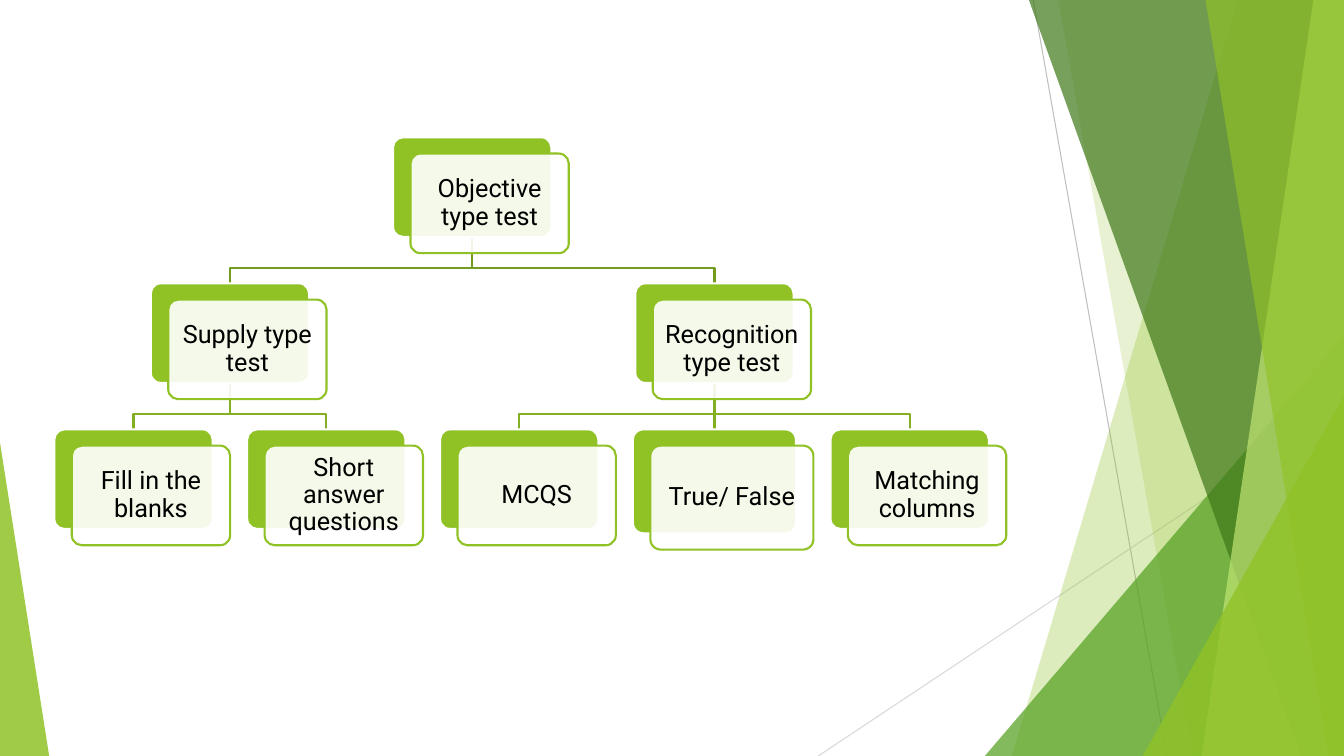
"""Build a slide with a tree of objective test types beside a green faceted border."""
from dataclasses import dataclass, field
from typing import Iterator, NamedTuple, Optional

from lxml.etree import SubElement
from pptx import Presentation
from pptx.dml.color import RGBColor
from pptx.enum.shapes import MSO_CONNECTOR as Link, MSO_SHAPE as Preset
from pptx.enum.text import MSO_ANCHOR as Anchor, PP_ALIGN as Align
from pptx.oxml.ns import qn
from pptx.util import Cm, Pt

COLORS = {
    "leaf": "90C226", "forest": "3F7819", "grass": "54A021", "lime": "C0E474",
    "root_link": "739B1E", "branch_link": "83B022",
    "gray": "BFBFBF", "pale": "D9D9D9", "white": "FFFFFF", "black": "000000",
}
WIDTH, HEIGHT = 33.87, 19.05
TREE_LEFT, TREE_TOP = 1.37, 3.46
LEAF_GAP, LEVEL_GAP, BEND = 0.87, 1.17, 0.79
CARD_W, CARD_H = 3.99, 2.51
OFFSET_X, OFFSET_Y = 0.44, 0.41
FRAME_FORMAT = {
    "word_wrap": True, "vertical_anchor": Anchor.MIDDLE,
    "margin_left": Cm(0.18), "margin_right": Cm(0.18),
    "margin_top": Cm(0.18), "margin_bottom": Cm(0.18),
}
PARAGRAPH_FORMAT = {"alignment": Align.CENTER, "line_spacing": 0.9}
FONT_FORMAT = {"name": "Roboto", "size": Pt(18)}


class Ray(NamedTuple):
    x1: float
    y1: float
    x2: float
    y2: float
    color: str


class Pane(NamedTuple):
    top_x: float
    bottom_x: float
    color: str
    opacity: int


class Wedge(NamedTuple):
    left: float
    top: float
    right: float
    apex: float
    color: str
    opacity: int


@dataclass
class TestType:
    label: str
    children: list["TestType"] = field(default_factory=list)
    width: float = CARD_W
    height: float = CARD_H
    center: float = 0
    top: float = TREE_TOP


RAYS = [
    Ray(26.04, 0, 29.41, HEIGHT, "gray"),
    Ray(WIDTH, 10.24, 20.62, HEIGHT, "pale"),
]
FACETS = [
    Pane(31.19, 25.5, "leaf", 30),
    Pane(26.67, 30.05, "leaf", 20),
    Wedge(24.82, 8.46, WIDTH, 1, "grass", 72),
    Pane(25.93, 32.79, "forest", 70),
    Pane(33.1, 30.28, "lime", 70),
    Pane(30.38, 33.48, "leaf", 65),
    Wedge(28.8, 9.98, WIDTH, 1, "leaf", 80),
    Wedge(0, 11.15, 1.24, 0, "leaf", 85),
]
OBJECTIVE = TestType("Objective type test", [
    TestType("Supply type test", [
        TestType("Fill in the blanks"),
        TestType("Short answer questions"),
    ]),
    TestType("Recognition type test", [
        TestType("MCQS"),
        TestType("True/ False", width=4.11, height=2.62),
        TestType("Matching columns"),
    ]),
])


def rgb(color: str) -> RGBColor:
    """Look up a named colour."""
    return RGBColor.from_string(COLORS[color])


def apply_format(target, values: dict) -> None:
    """Set every format value on the target."""
    for name, value in values.items():
        setattr(target, name, value)


def paint(shape, fill: Optional[str], opacity: int = 100, line: Optional[str] = None) -> None:
    """Set the fill, opacity and outline of a shape."""
    shape.shadow.inherit = False
    if fill:
        shape.fill.solid()
        shape.fill.fore_color.rgb = rgb(fill)
        if opacity < 100:
            tint = shape.fill._xPr.find(f".//{qn('a:srgbClr')}")
            SubElement(tint, qn("a:alpha")).set("val", str(opacity * 1000))
    else:
        shape.fill.background()
    if line:
        shape.line.color.rgb = rgb(line)
        shape.line.width = Pt(1.5)
    else:
        shape.line.fill.background()


def draw_ray(shapes, ray: Ray, width: float = 0.75) -> None:
    """Draw one straight line."""
    ends = (Cm(length) for length in ray[:4])
    line = shapes.add_connector(Link.STRAIGHT, *ends)
    line.line.color.rgb = rgb(ray.color)
    line.line.width = Pt(width)
    SubElement(line._element.spPr, qn("a:effectLst"))


def draw_outline(shapes, points: list[tuple[float, float]], close: bool):
    """Draw a freeform through the points."""
    start, *rest = [(Cm(x), Cm(y)) for x, y in points]
    builder = shapes.build_freeform(*start)
    builder.add_line_segments(rest, close=close)
    return builder.convert_to_shape()


def draw_facet(shapes, facet: Pane | Wedge) -> None:
    """Draw one translucent facet of the border."""
    if isinstance(facet, Pane):
        corners = [(facet.top_x, 0), (WIDTH, 0), (WIDTH, HEIGHT), (facet.bottom_x, HEIGHT)]
        shape = draw_outline(shapes, corners, True)
    else:
        shape = shapes.add_shape(
            Preset.ISOSCELES_TRIANGLE, Cm(facet.left), Cm(facet.top),
            Cm(facet.right - facet.left), Cm(HEIGHT - facet.top))
        shape.adjustments[0] = facet.apex
    paint(shape, facet.color, facet.opacity)


def place(node: TestType, left: float, top: float) -> float:
    """Centre a node over its children and return the next free left edge."""
    node.top = top
    if not node.children:
        node.center = left + node.width / 2
        return left + node.width + LEAF_GAP
    for child in node.children:
        left = place(child, left, top + node.height + LEVEL_GAP)
    node.center = (node.children[0].center + node.children[-1].center) / 2
    return left


def walk(node: TestType) -> Iterator[TestType]:
    """Yield a node and all its descendants."""
    yield node
    for child in node.children:
        yield from walk(child)


def draw_links(shapes, parent: TestType) -> None:
    """Join a parent to each of its children."""
    color = "root_link" if parent is OBJECTIVE else "branch_link"
    x, y = parent.center, parent.top + parent.height
    for child in parent.children:
        if abs(child.center - x) < 0.1:
            draw_ray(shapes, Ray(x, y, x, child.top, color), 1.5)
        else:
            bends = [(x, y), (x, y + BEND), (child.center, y + BEND), (child.center, child.top)]
            paint(draw_outline(shapes, bends, False), None, line=color)


def draw_card(shapes, node: TestType, dx: float, dy: float):
    """Draw one rounded card of a node."""
    card = shapes.add_shape(
        Preset.ROUNDED_RECTANGLE, Cm(node.center - node.width / 2 + dx), Cm(node.top + dy),
        Cm(node.width), Cm(node.height))
    card.adjustments[0] = 0.1
    return card


def draw_node(shapes, node: TestType) -> None:
    """Draw the green back card and the labelled front card."""
    paint(draw_card(shapes, node, 0, 0), "leaf", line="white")
    front = draw_card(shapes, node, OFFSET_X, OFFSET_Y)
    paint(front, "white", 90, "leaf")
    apply_format(front.text_frame, FRAME_FORMAT)
    label = front.text_frame.paragraphs[0]
    label.text = node.label
    apply_format(label, PARAGRAPH_FORMAT)
    font = label.runs[0].font
    apply_format(font, FONT_FORMAT)
    font.color.rgb = rgb("black")


def main() -> None:
    """Build and save the slide."""
    deck = Presentation()
    apply_format(deck, {"slide_width": Cm(WIDTH), "slide_height": Cm(HEIGHT)})
    shapes = deck.slides.add_slide(deck.slide_layouts[6]).shapes
    place(OBJECTIVE, TREE_LEFT, TREE_TOP)
    for items, draw in ((RAYS, draw_ray), (FACETS, draw_facet),
                        (walk(OBJECTIVE), draw_links), (walk(OBJECTIVE), draw_node)):
        for item in items:
            draw(shapes, item)
    deck.save("out.pptx")


if __name__ == "__main__":
    main()
